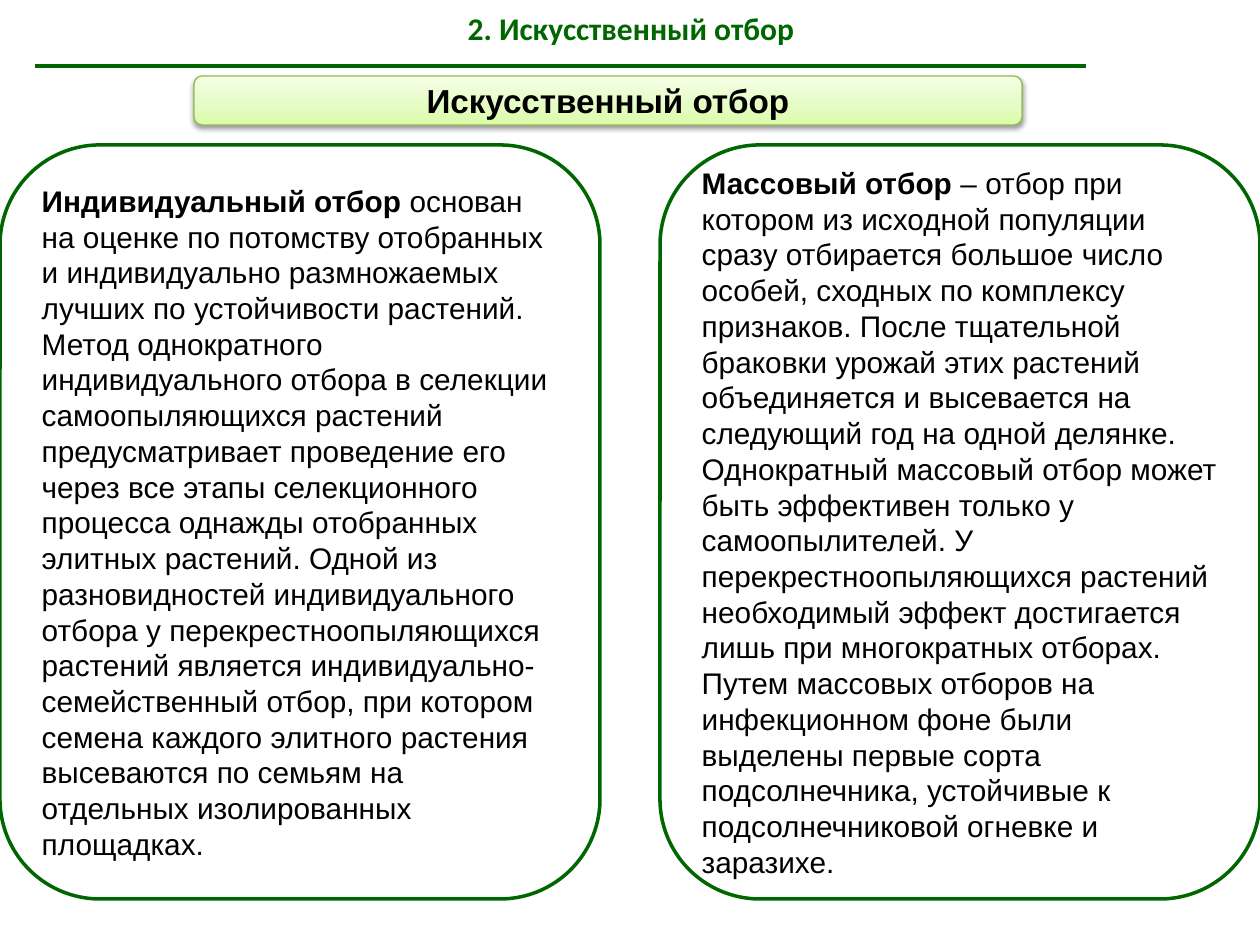
from dataclasses import dataclass

from lxml import etree
from pptx import Presentation
from pptx import util as u
from pptx.dml.color import RGBColor
from pptx.enum import shapes, text
from pptx.oxml import ns

EMU_PER_PX = 914400 / 126


def px(length):
    return u.Emu(round(length * EMU_PER_PX))


@dataclass(frozen=True)
class Theme:
    green: str = "006600"
    white: str = "FFFFFF"
    black: str = "000000"
    banner_line: str = "98B955"
    banner_stops: tuple = ((0, "DAFDA7"), (35, "E4FCC2"), (100, "F5FFE7"))
    title_font: str = "Calibri"
    body_font: str = "Arial"
    title_size: int = 18
    banner_size: int = 19
    body_size: int = 17
    outline: float = 2
    thin: float = 0.75


def write(frame, paragraphs, *, font, size, color, align=text.PP_ALIGN.LEFT):
    """Fill a frame; each paragraph is a list of (words, bold) runs."""
    frame.word_wrap = True
    frame.vertical_anchor = text.MSO_ANCHOR.MIDDLE
    for index, runs in enumerate(paragraphs):
        paragraph = frame.paragraphs[0] if index == 0 else frame.add_paragraph()
        paragraph.alignment = align
        for words, bold in runs:
            run = paragraph.add_run()
            run.text = words
            run.font.name, run.font.size, run.font.bold = font, u.Pt(size), bold
            run.font.color.rgb = RGBColor.from_string(color)


def add_node(parent, tag, **attributes):
    values = {name: str(value) for name, value in attributes.items()}
    return etree.SubElement(parent, ns.qn(tag), values)


class SlideBuilder:
    def __init__(self, slide, theme):
        self.slide = slide
        self.theme = theme

    def title(self, words, left, top, width, height):
        box = self.slide.shapes.add_textbox(*map(px, (left, top, width, height)))
        write(box.text_frame, [[(words, True)]], font=self.theme.title_font,
              size=self.theme.title_size, color=self.theme.green,
              align=text.PP_ALIGN.CENTER)

    def rule(self, left, right, y):
        line = self.slide.shapes.add_connector(
            shapes.MSO_CONNECTOR.STRAIGHT, px(left), px(y), px(right), px(y))
        line.line.color.rgb = RGBColor.from_string(self.theme.green)
        line.line.width = u.Pt(self.theme.outline)
        add_node(line.element.spPr, "a:effectLst")

    def rounded(self, left, top, width, height, outline, weight):
        shape = self.slide.shapes.add_shape(
            shapes.MSO_SHAPE.ROUNDED_RECTANGLE, *map(px, (left, top, width, height)))
        shape.shadow.inherit = False
        shape.fill.solid()
        shape.fill.fore_color.rgb = RGBColor.from_string(self.theme.white)
        shape.line.color.rgb = RGBColor.from_string(outline)
        shape.line.width = u.Pt(weight)
        return shape

    def banner(self, words, left, top, width, height):
        shape = self.rounded(left, top, width, height,
                             self.theme.banner_line, self.theme.thin)
        properties = shape.element.spPr

        # Three-stop gradient, running upwards
        shape.fill.gradient()
        gradient = properties.find(ns.qn("a:gradFill"))
        for child in list(gradient):
            gradient.remove(child)
        stops = add_node(gradient, "a:gsLst")
        for position, color in self.theme.banner_stops:
            stop = add_node(stops, "a:gs", pos=position * 1000)
            add_node(stop, "a:srgbClr", val=color)
        add_node(gradient, "a:lin", ang=270 * 60000, scaled=0)

        # Soft shadow below
        shadow = add_node(properties.find(ns.qn("a:effectLst")), "a:outerShdw",
                          blurRad=u.Pt(3.1), dist=u.Pt(1.6), dir=90 * 60000,
                          rotWithShape=0)
        shade = add_node(shadow, "a:srgbClr", val=self.theme.black)
        add_node(shade, "a:alpha", val=38000)

        write(shape.text_frame, [[(words, True)]], font=self.theme.body_font,
              size=self.theme.banner_size, color=self.theme.black,
              align=text.PP_ALIGN.CENTER)

    def panel(self, paragraphs, left, top, width, height):
        shape = self.rounded(left, top, width, height,
                             self.theme.green, self.theme.outline)
        write(shape.text_frame, paragraphs, font=self.theme.body_font,
              size=self.theme.body_size, color=self.theme.black)


INDIVIDUAL = [
    [("Индивидуальный отбор", True),
     (" основан на оценке по потомству отобранных и индивидуально размножаемых "
      "лучших по устойчивости растений. Метод однократного индивидуального отбора "
      "в селекции самоопыляющихся растений предусматривает проведение его через все "
      "этапы селекционного процесса однажды отобранных элитных растений. Одной из "
      "разновидностей индивидуального отбора у перекрестноопыляющихся растений "
      "является индивидуально-семейственный отбор, при котором семена каждого "
      "элитного растения высеваются по семьям на отдельных изолированных площадках.",
      False)],
]
MASS = [
    [("Массовый отбор ", True),
     ("– отбор при котором из исходной популяции сразу отбирается большое число "
      "особей, сходных по комплексу признаков. После тщательной браковки урожай этих "
      "растений объединяется и высевается на следующий год на одной делянке.", False)],
    [("Однократный массовый отбор может быть эффективен только у самоопылителей. "
      "У перекрестноопыляющихся растений необходимый эффект достигается лишь при "
      "многократных отборах.", False)],
    [("Путем массовых отборов на инфекционном фоне были выделены первые сорта "
      "подсолнечника, устойчивые к подсолнечниковой огневке и заразихе.", False)],
]


def main():
    deck = Presentation()
    deck.slide_width, deck.slide_height = px(1260), px(945)
    builder = SlideBuilder(deck.slides.add_slide(deck.slide_layouts[6]), Theme())

    # Heading
    builder.title("2. Искусственный отбор", 64, 0, 1134, 55)
    builder.rule(35, 1086, 66)
    builder.banner("Искусственный отбор", 194, 76, 828, 49)

    # Two kinds of selection, flush with the slide edges
    panel_width = 600
    for left, paragraphs in ((0, INDIVIDUAL), (1260 - panel_width, MASS)):
        builder.panel(paragraphs, left, 145, panel_width, 754)

    deck.save("out.pptx")


if __name__ == "__main__":
    main()
